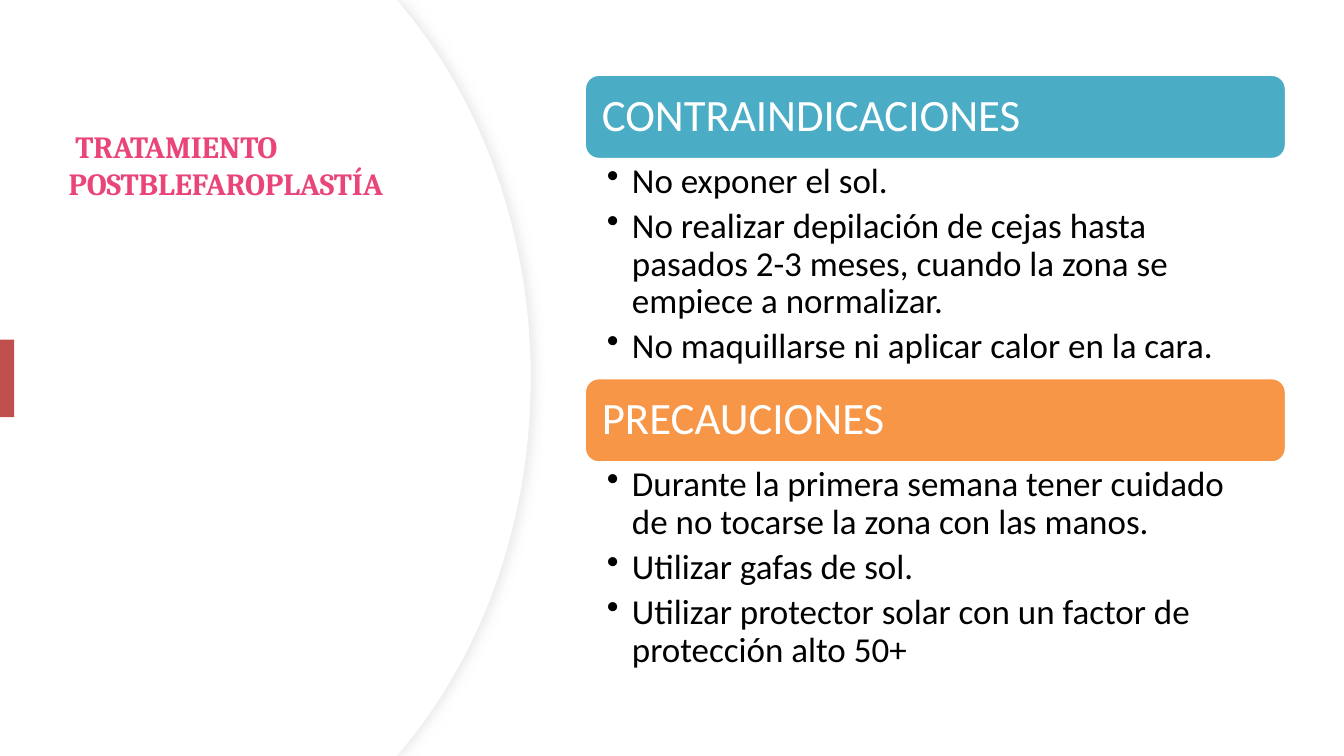
from lxml.etree import SubElement
from pptx import Presentation
from pptx.dml.color import RGBColor
from pptx.enum.shapes import MSO_SHAPE
from pptx.enum.text import MSO_ANCHOR, MSO_AUTO_SIZE, PP_ALIGN
from pptx.oxml.ns import qn
from pptx.util import Inches, Pt

WIDE, HIGH = Inches(13.33), Inches(7.5)
HUES = {"white": "FFFFFF", "edge": "EFEFEF", "shade": "D9D9D9",
        "pink": "E94578", "red": "C0504D", "teal": "4BACC6",
        "orange": "F79646", "black": "000000"}

# Shares of the slide, in percent
LEFT, SPAN = 43.5, 52.2
TOP, HEAD, BODY = 9.87, 11.2, 28.93

PARTS = [
    ("CONTRAINDICACIONES", "teal", [
        "No exponer el sol.",
        "No realizar depilación de cejas hasta pasados 2-3 meses, "
        "cuando la zona se empiece a normalizar.",
        "No maquillarse ni aplicar calor en la cara."]),
    ("PRECAUCIONES", "orange", [
        "Durante la primera semana tener cuidado de no tocarse la zona "
        "con las manos.",
        "Utilizar gafas de sol.",
        "Utilizar protector solar con un factor de protección alto 50+"]),
]


def hue(name):
    return RGBColor.from_string(HUES[name])


def area(x, y, w, h):
    return [round(side * part / 100)
            for side, part in zip((WIDE, HIGH, WIDE, HIGH), (x, y, w, h))]


def paint(shape, fill, line=None, width=0.75):
    shape.shadow.inherit = False
    shape.fill.solid()
    shape.fill.fore_color.rgb = hue(fill)
    if line:
        shape.line.color.rgb = hue(line)
        shape.line.width = Pt(width)
    else:
        shape.line.fill.background()


def write(frame, text, *, size, color, font="Calibri", bold=False,
          pads=(0, 0, 0, 0), anchor=MSO_ANCHOR.TOP, lead=1.0, after=0,
          bullet=False):
    """Put one line or a list of lines into a text frame."""
    frame.word_wrap = True
    frame.auto_size = MSO_AUTO_SIZE.NONE
    frame.vertical_anchor = anchor
    (frame.margin_left, frame.margin_top,
     frame.margin_right, frame.margin_bottom) = map(Inches, pads)
    lines = [text] if isinstance(text, str) else text
    for i, line in enumerate(lines):
        para = frame.add_paragraph() if i else frame.paragraphs[0]
        if bullet:
            props = para._p.get_or_add_pPr()
            props.set("marL", str(Inches(0.25)))
            props.set("indent", str(-Inches(0.25)))
            SubElement(props, qn("a:buChar"), char="•")
        para.alignment = PP_ALIGN.LEFT
        para.line_spacing = lead
        para.space_before = Pt(0)
        para.space_after = Pt(after)
        run = para.add_run()
        run.text = line
        run.font.name, run.font.size, run.font.bold = font, Pt(size), bold
        run.font.color.rgb = hue(color)


def curve(a, b, c, d, steps=24):
    """Points along a cubic curve, both ends included."""
    for i in range(steps + 1):
        t = i / steps
        u = 1 - t
        yield tuple(u**3 * p + 3 * u * u * t * q + 3 * u * t * t * r + t**3 * s
                    for p, q, r, s in zip(a, b, c, d))


def panel(slide, reach, line=None):
    """White panel whose right side bulges out to the given share."""
    upper = list(curve((reach - 9.45, 1.07), (reach - 3.6, 13.6),
                       (reach, 30.93), (reach, 50)))
    lower = [(x, 100 - y) for x, y in reversed(upper[:-1])]
    dots = [(29.56, 0), *upper, *lower, (29.56, 100), (0, 100)]
    build = slide.shapes.build_freeform(0, 0)
    build.add_line_segments([area(x, y, 0, 0)[:2] for x, y in dots])
    shape = build.convert_to_shape()
    paint(shape, "white", line)
    return shape


def shade(shape):
    """Soft shadow to the right."""
    glow = SubElement(shape._element.spPr.find(qn("a:effectLst")),
                      qn("a:outerShdw"), blurRad=str(Pt(7)),
                      dist=str(Pt(3)), dir="0", algn="l", rotWithShape="0")
    tone = SubElement(glow, qn("a:srgbClr"), val=HUES["shade"])
    SubElement(tone, qn("a:alpha"), val="50000")


def block(slide, top, name, fill, items):
    """Coloured heading with its bullet list below."""
    bar = slide.shapes.add_shape(MSO_SHAPE.ROUNDED_RECTANGLE,
                                 *area(LEFT, top, SPAN, HEAD))
    paint(bar, fill, "white", 2)
    write(bar.text_frame, name, size=32, color="white", pads=(0.13,) * 4,
          anchor=MSO_ANCHOR.MIDDLE, lead=0.9)
    box = slide.shapes.add_textbox(*area(LEFT, top + HEAD, SPAN, BODY))
    write(box.text_frame, items, size=25, color="black",
          pads=(0.22, 0.04, 0.25, 0.04), lead=0.9, after=5, bullet=True)


def main():
    deck = Presentation()
    deck.slide_width, deck.slide_height = WIDE, HIGH
    slide = deck.slides.add_slide(deck.slide_layouts[5])

    # Curved panel behind the title
    shade(panel(slide, 39.53, "edge"))
    panel(slide, 39.46)

    # Title, brought in front of the panel
    title = slide.shapes.title
    title.left, title.top, title.width, title.height = area(
        5.1, 16.93, 29.56, 66)
    write(title.text_frame, " TRATAMIENTO POSTBLEFAROPLASTÍA", size=22,
          color="pink", font="Cambria", bold=True)
    slide.shapes._spTree.append(title._element)

    # Red mark at the left edge
    mark = slide.shapes.add_shape(MSO_SHAPE.RECTANGLE,
                                  *area(0, 44.93, 1.05, 10.27))
    paint(mark, "red")

    # Headings and lists
    for i, part in enumerate(PARTS):
        block(slide, TOP + i * (HEAD + BODY), *part)

    deck.save("out.pptx")


if __name__ == "__main__":
    main()
